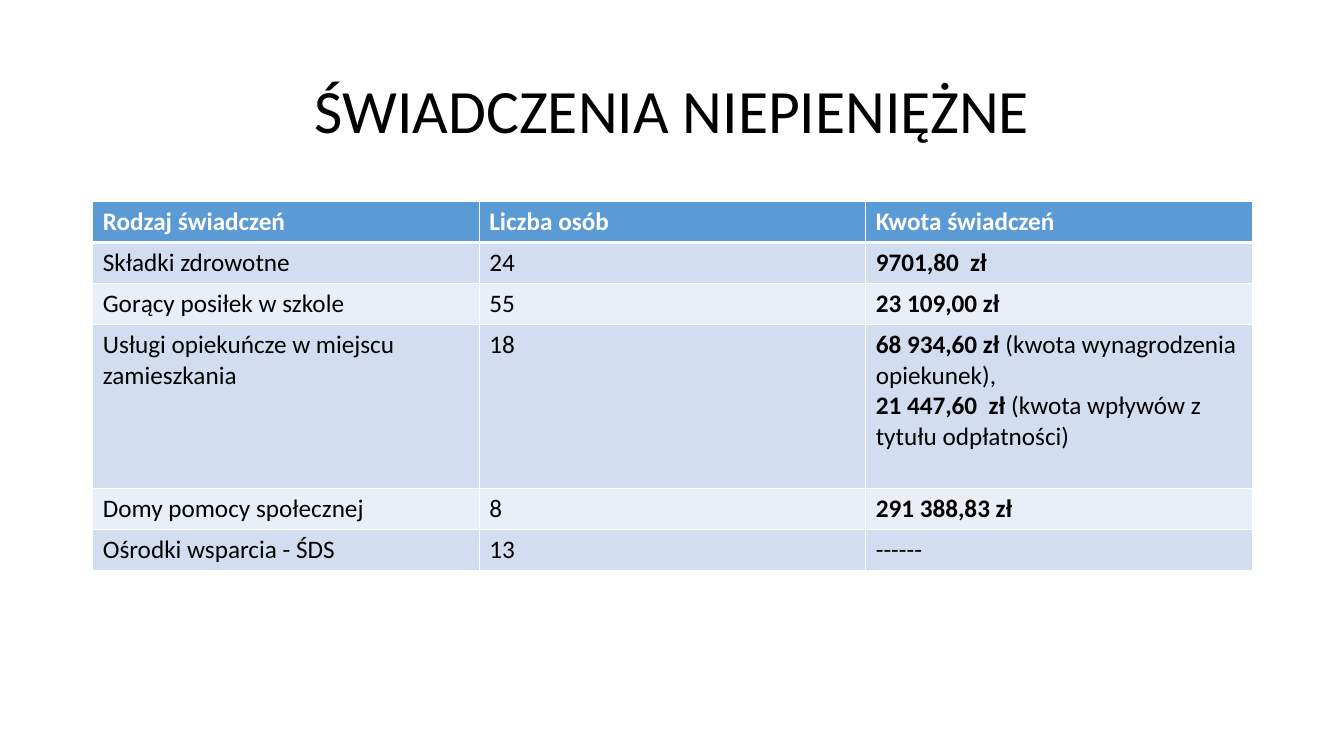
from dataclasses import dataclass

from lxml.etree import SubElement
from pptx import Presentation
from pptx.dml.color import RGBColor
from pptx.enum.text import MSO_ANCHOR, PP_ALIGN
from pptx.oxml.ns import qn
from pptx.util import Inches, Pt


@dataclass(frozen=True)
class Theme:
    font: str = "Calibri"
    title_size: int = 44
    cell_size: int = 18
    text: str = "000000"
    light: str = "FFFFFF"
    header: str = "5B9BD5"
    bands: tuple = ("D2DEEF", "EAEFF7")
    rule: float = 1
    header_rule: float = 3


HEADERS = ["Rodzaj świadczeń", "Liczba osób", "Kwota świadczeń"]
BENEFITS = [
    ("Składki zdrowotne", "24", [("9701,80  zł", "")]),
    ("Gorący posiłek w szkole", "55", [("23 109,00 zł", "")]),
    ("Usługi opiekuńcze w miejscu zamieszkania", "18", [
        ("68 934,60 zł ", "(kwota wynagrodzenia opiekunek),"),
        ("21 447,60  zł ", "(kwota wpływów z tytułu odpłatności)"),
    ]),
    ("Domy pomocy społecznej", "8", [("291 388,83 zł", "")]),
    ("Ośrodki wsparcia - ŚDS", "13", [("", "------")]),
]
ROW_HEIGHTS = [0.4, 0.4, 0.4, 1.63, 0.4, 0.4]


class SlideBuilder:
    """Adds styled elements to one slide."""

    def __init__(self, slide, theme):
        self.s = slide
        self.theme = theme

    def style(self, p, size, color):
        p.font.name = self.theme.font
        p.font.size = Pt(size)
        p.font.color.rgb = RGBColor.from_string(color)

    def title(self, text, left, top, width, height):
        sp = self.s.shapes.title
        sp.left, sp.top = Inches(left), Inches(top)
        sp.width, sp.height = Inches(width), Inches(height)
        tf = sp.text_frame
        tf.text = text
        tf.vertical_anchor = MSO_ANCHOR.MIDDLE
        p = tf.paragraphs[0]
        p.alignment = PP_ALIGN.CENTER
        p.line_spacing = 0.9
        self.style(p, self.theme.title_size, self.theme.text)

    def borders(self, cell, top, bottom):
        tcPr = cell._tc.get_or_add_tcPr()
        sides = {"L": self.theme.rule, "R": self.theme.rule, "T": top, "B": bottom}
        for side, width in sides.items():
            ln = SubElement(tcPr, qn(f"a:ln{side}"), w=str(Pt(width)))
            SubElement(SubElement(ln, qn("a:solidFill")), qn("a:srgbClr"), val=self.theme.light)

    def cell(self, cell, lines, row):
        th = self.theme
        self.borders(cell, th.header_rule if row == 1 else th.rule,
                     th.header_rule if row == 0 else th.rule)
        cell.fill.solid()
        fill = th.bands[(row - 1) % 2] if row else th.header
        cell.fill.fore_color.rgb = RGBColor.from_string(fill)
        tf = cell.text_frame
        for i, line in enumerate(lines):
            p = tf.add_paragraph() if i else tf.paragraphs[0]
            self.style(p, th.cell_size, th.text if row else th.light)
            for text, bold in zip(line, (True, False)):
                if text:
                    r = p.add_run()
                    r.text = text
                    r.font.bold = bold

    def table(self, rows, heights, left, top, width):
        frame = self.s.shapes.add_table(len(rows), len(rows[0]), Inches(left), Inches(top),
                                        Inches(width), Inches(sum(heights)))
        table = frame.table
        for i, (values, height) in enumerate(zip(rows, heights)):
            table.rows[i].height = Inches(height)
            for j, lines in enumerate(values):
                self.cell(table.cell(i, j), lines, i)


def main():
    prs = Presentation()
    prs.slide_width, prs.slide_height = Inches(13.33), Inches(7.5)
    s = prs.slides.add_slide(prs.slide_layouts[5])
    builder = SlideBuilder(s, Theme())
    builder.title("ŚWIADCZENIA NIEPIENIĘŻNE", 0.92, 0.4, 11.5, 1.45)
    rows = [[[(text, "")] for text in HEADERS]]
    rows += [[[("", kind)], [("", people)], amounts] for kind, people, amounts in BENEFITS]
    builder.table(rows, ROW_HEIGHTS, 0.92, 2, 11.5)
    prs.save("out.pptx")


if __name__ == "__main__":
    main()
